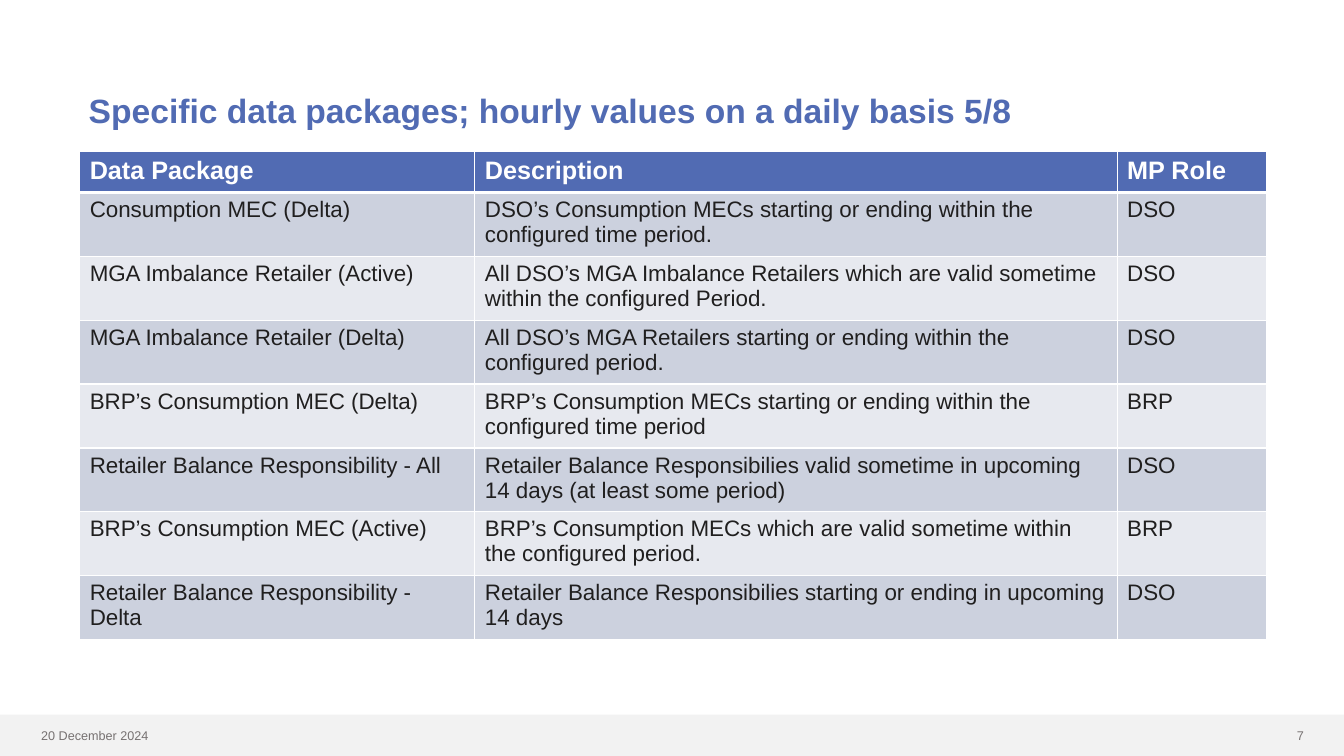
from pptx import Presentation
from pptx.dml.color import RGBColor
from pptx.enum.shapes import MSO_SHAPE
from pptx.enum.text import MSO_ANCHOR, MSO_AUTO_SIZE, PP_ALIGN
from pptx.oxml import parse_xml
from pptx.oxml.ns import nsdecls
from pptx.util import Inches, Pt

RECTANGLE = MSO_SHAPE.RECTANGLE
MIDDLE = MSO_ANCHOR.MIDDLE
LEFT, RIGHT = PP_ALIGN.LEFT, PP_ALIGN.RIGHT

COLORS = {
    "blue": "516BB3",
    "white": "FFFFFF",
    "text": "201F1F",
    "dark band": "CCD1DE",
    "light band": "E7E9EF",
    "footer": "F2F2F2",
    "footer text": "767171",
}
COLUMN_WIDTHS = [3.92, 6.37, 1.48]
HEADER_HEIGHT, ROW_HEIGHT = 0.41, 0.59
ROWS = [
    ("Data Package", "Description", "MP Role"),
    ("Consumption MEC (Delta)",
     "DSO’s Consumption MECs starting or ending within the configured time period.", "DSO"),
    ("MGA Imbalance Retailer (Active)",
     "All DSO’s MGA Imbalance Retailers which are valid sometime within the configured Period.",
     "DSO"),
    ("MGA Imbalance Retailer (Delta)",
     "All DSO’s MGA Retailers starting or ending within the configured period.", "DSO"),
    ("BRP’s Consumption MEC (Delta)",
     "BRP’s Consumption MECs starting or ending within the configured time period", "BRP"),
    ("Retailer Balance Responsibility - All",
     "Retailer Balance Responsibilies valid sometime in upcoming 14 days (at least some period)",
     "DSO"),
    ("BRP’s Consumption MEC (Active)",
     "BRP’s Consumption MECs which are valid sometime within the configured period.", "BRP"),
    ("Retailer Balance Responsibility - Delta",
     "Retailer Balance Responsibilies starting or ending in upcoming 14 days", "DSO"),
]


def write(frame, text, size, color, bold=False, align=LEFT):
    """Put one formatted run in the frame's first paragraph and return the paragraph."""
    para = frame.paragraphs[0]
    para.alignment = align
    span = para.add_run()
    span.text = text
    span.font.name = "Arial"
    span.font.size = Pt(size)
    span.font.bold = bold
    span.font.color.rgb = RGBColor.from_string(COLORS[color])
    return para


def add_border(cell, side, points):
    cell._tc.get_or_add_tcPr().append(parse_xml(
        f'<a:ln{side} {nsdecls("a")} w="{Pt(points)}"><a:solidFill>'
        f'<a:srgbClr val="{COLORS["white"]}"/></a:solidFill></a:ln{side}>'))


deck = Presentation()
deck.slide_width, deck.slide_height = Inches(13.33), Inches(7.5)
page = deck.slides.add_slide(deck.slide_layouts[5])

# Footer
band = page.shapes.add_shape(RECTANGLE, 0, Inches(7.09), Inches(13.33), Inches(0.41))
band.shadow.inherit = False
band.fill.solid()
band.fill.fore_color.rgb = RGBColor.from_string(COLORS["footer"])
band.line.fill.background()

for text, left, width, align in [("7", 12.21, 0.82, RIGHT),
                                 ("20 December 2024", 0.31, 2.12, LEFT)]:
    box = page.shapes.add_textbox(Inches(left), Inches(7.17), Inches(width), Inches(0.25))
    box.text_frame.word_wrap = True
    box.text_frame.auto_size = MSO_AUTO_SIZE.SHAPE_TO_FIT_TEXT
    write(box.text_frame, text, 9, "footer text", align=align)

# Title
title = page.shapes.title
title.left, title.top = Inches(0.78), Inches(0.39)
title.width, title.height = Inches(11.73), Inches(1.45)
title.text_frame.vertical_anchor = MIDDLE
heading = write(title.text_frame, "Specific data packages; hourly values on a daily basis 5/8",
                24, "blue", bold=True)
heading.line_spacing = 0.9

# Data packages
table = page.shapes.add_table(
    len(ROWS), len(COLUMN_WIDTHS), Inches(0.79), Inches(1.5), Inches(sum(COLUMN_WIDTHS)),
    Inches(HEADER_HEIGHT + ROW_HEIGHT * (len(ROWS) - 1))).table
for column, width in zip(table.columns, COLUMN_WIDTHS):
    column.width = Inches(width)

for row_index, texts in enumerate(ROWS):
    header = row_index == 0
    table.rows[row_index].height = Inches(HEADER_HEIGHT if header else ROW_HEIGHT)
    if header:
        fill, size, color = "blue", 18, "white"
    else:
        fill, size, color = "dark band" if row_index % 2 else "light band", 16, "text"
    for column_index, text in enumerate(texts):
        cell = table.cell(row_index, column_index)
        for side in "LRTB":
            thick = (header and side == "B") or (row_index == 1 and side == "T")
            add_border(cell, side, 3 if thick else 1)
        cell.fill.solid()
        cell.fill.fore_color.rgb = RGBColor.from_string(COLORS[fill])
        write(cell.text_frame, text, size, color, bold=header)

deck.save("out.pptx")
